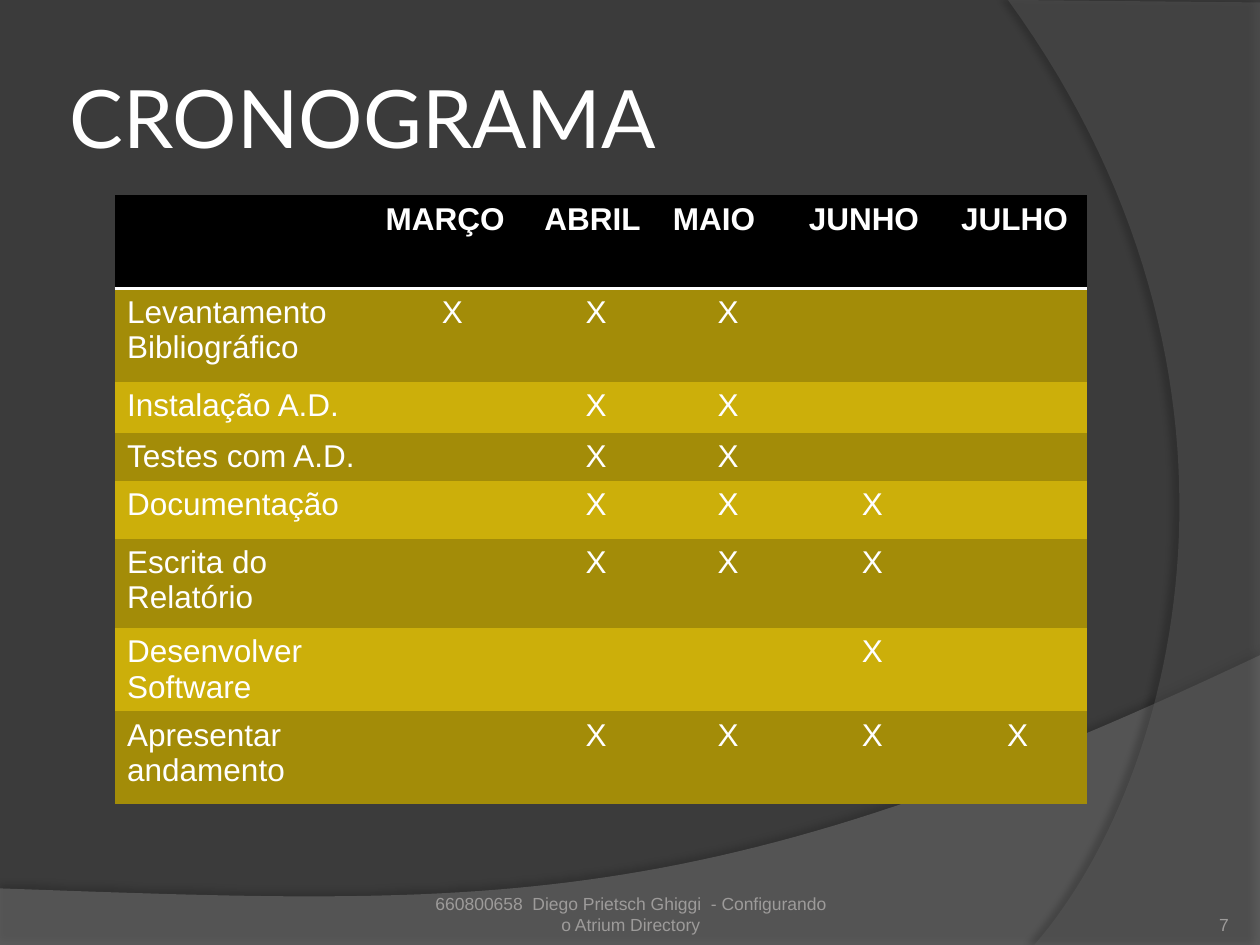
from dataclasses import dataclass

import pptx
import pptx.dml.color
import pptx.enum.text
import pptx.oxml
import pptx.oxml.ns
import pptx.util

Cm = pptx.util.Cm
Pt = pptx.util.Pt
RGBColor = pptx.dml.color.RGBColor
ALIGN = pptx.enum.text.PP_ALIGN
ANCHOR = pptx.enum.text.MSO_ANCHOR
NS = pptx.oxml.ns.nsdecls("a")

BACKGROUND = RGBColor(0x3B, 0x3B, 0x3B)
WHITE = RGBColor(0xFF, 0xFF, 0xFF)
BLACK = RGBColor(0x00, 0x00, 0x00)
FOOTER_GRAY = RGBColor(0x9D, 0x9B, 0x9A)
WAVE_GRAY = RGBColor(0x7F, 0x7F, 0x7F)
ARC_GRAY = RGBColor(0x5E, 0x5E, 0x5E)
DARK_GOLD = RGBColor(0xA3, 0x8C, 0x08)
LIGHT_GOLD = RGBColor(0xCC, 0xAF, 0x0A)

NO_STYLE = "{2D5ABB26-0587-4C30-8999-92F81FD0307C}"
WIDTH, HEIGHT = 25.4, 19.05
Point = tuple[float, float]


@dataclass
class Swoosh:
    """Straight corners, then a Bézier curve from the last corner; lengths in cm."""
    corners: list[Point]
    curve: tuple[Point, Point, Point]
    color: RGBColor
    opacity: int
    shadow_opacity: int
    shadow_distance: float
    shadow_angle: int


@dataclass
class Task:
    name: str
    months: str
    height: float


SWOOSHES = [
    Swoosh([(0, 17.91), (0, HEIGHT), (WIDTH, HEIGHT), (WIDTH, 13.21)],
           ((14.2, 18.52), (9.93, 18.26), (0, 17.91)), WAVE_GRAY, 45, 35, 3.5, 270),
    Swoosh([(WIDTH, 0.05), (WIDTH, HEIGHT), (20.85, HEIGHT)],
           ((23.75, 15.72), (25.86, 7.62), (20.32, 0)), ARC_GRAY, 40, 45, 4, 180),
]
MONTHS = ["MARÇO", "ABRIL", "MAIO", "JUNHO", "JULHO"]
COLUMN_WIDTHS = [5.21, 3.2, 2.59, 2.74, 3.07, 2.79]
HEADER_HEIGHT = 1.88
TASKS = [
    Task("Levantamento Bibliográfico", "MARÇO ABRIL MAIO", 1.88),
    Task("Instalação A.D.", "ABRIL MAIO", 1.02),
    Task("Testes com A.D.", "ABRIL MAIO", 0.97),
    Task("Documentação", "ABRIL MAIO JUNHO", 1.17),
    Task("Escrita do Relatório", "ABRIL MAIO JUNHO", 1.8),
    Task("Desenvolver Software", "JUNHO", 1.42),
    Task("Apresentar andamento", "ABRIL MAIO JUNHO JULHO", 1.88),
]


def write(tf, text: str, *, size: float = 18, color: RGBColor = WHITE,
          font: str = "Arial", bold: bool = False, align=ALIGN.LEFT) -> None:
    p = tf.paragraphs[0]
    p.alignment = align
    r = p.add_run()
    r.text = text
    r.font.size = Pt(size)
    r.font.name = font
    r.font.bold = bold
    r.font.color.rgb = color


def set_frame(tf, anchor, left: float, top: float, right: float, bottom: float) -> None:
    tf.word_wrap = True
    tf.auto_size = pptx.enum.text.MSO_AUTO_SIZE.NONE
    tf.vertical_anchor = anchor
    tf.margin_left, tf.margin_top = Cm(left), Cm(top)
    tf.margin_right, tf.margin_bottom = Cm(right), Cm(bottom)


def curve_points(start: Point, curve: tuple[Point, Point, Point],
                 steps: int = 60) -> list[Point]:
    points = []
    for i in range(1, steps + 1):
        t = i / steps
        weights = ((1 - t) ** 3, 3 * t * (1 - t) ** 2, 3 * t ** 2 * (1 - t), t ** 3)
        x, y = (sum(w * p[axis] for w, p in zip(weights, (start, *curve)))
                for axis in (0, 1))
        points.append((x, y))
    return points


def draw_swoosh(slide, swoosh: Swoosh) -> None:
    outline = swoosh.corners + curve_points(swoosh.corners[-1], swoosh.curve)
    start, *rest = [(Cm(x), Cm(y)) for x, y in outline]
    builder = slide.shapes.build_freeform(*start)
    builder.add_line_segments(rest, close=True)
    sp = builder.convert_to_shape()
    sp.fill.solid()
    sp.fill.fore_color.rgb = swoosh.color
    sp.line.fill.background()
    sp.shadow.inherit = False
    sp_pr = sp._element.spPr
    sp_pr.find(".//" + pptx.oxml.ns.qn("a:srgbClr")).append(
        pptx.oxml.parse_xml(f'<a:alpha {NS} val="{swoosh.opacity * 1000}"/>'))
    sp_pr.find(pptx.oxml.ns.qn("a:effectLst")).append(pptx.oxml.parse_xml(
        f'<a:outerShdw {NS} blurRad="{Pt(4)}" dist="{Pt(swoosh.shadow_distance)}" '
        f'dir="{swoosh.shadow_angle * 60000}" algn="ctr" rotWithShape="0">'
        f'<a:srgbClr val="000000"><a:alpha val="{swoosh.shadow_opacity * 1000}"/>'
        '</a:srgbClr></a:outerShdw>'))


def add_footer(slide, text: str, left: float, width: float, align, top_inset: float) -> None:
    box = slide.shapes.add_textbox(Cm(left), Cm(17.83), Cm(width), Cm(1.02))
    set_frame(box.text_frame, ANCHOR.BOTTOM, 0, top_inset, 0, 0)
    write(box.text_frame, text, size=10, color=FOOTER_GRAY, align=align)


def fill_cell(cell, color: RGBColor, text: str, **text_format) -> None:
    cell.fill.solid()
    cell.fill.fore_color.rgb = color
    write(cell.text_frame, text, **text_format)


def underline_cell(cell) -> None:
    cell._tc.get_or_add_tcPr().insert(0, pptx.oxml.parse_xml(
        f'<a:lnB {NS} w="{Pt(2)}"><a:solidFill><a:srgbClr val="{WHITE}"/>'
        '</a:solidFill></a:lnB>'))


def add_schedule(slide) -> None:
    heights = [HEADER_HEIGHT] + [task.height for task in TASKS]
    table = slide.shapes.add_table(
        len(heights), len(COLUMN_WIDTHS), Cm(2.31), Cm(3.94),
        Cm(sum(COLUMN_WIDTHS)), Cm(sum(heights))).table
    table._tbl.tblPr.find(pptx.oxml.ns.qn("a:tableStyleId")).text = NO_STYLE
    for column, width in zip(table.columns, COLUMN_WIDTHS):
        column.width = Cm(width)
    for row, height in zip(table.rows, heights):
        row.height = Cm(height)
    for col, month in enumerate(["", *MONTHS]):
        fill_cell(table.cell(0, col), BLACK, month, bold=True)
        underline_cell(table.cell(0, col))
    for row, task in enumerate(TASKS, 1):
        color = DARK_GOLD if row % 2 else LIGHT_GOLD
        fill_cell(table.cell(row, 0), color, task.name)
        for col, month in enumerate(MONTHS, 1):
            mark = "X" if month in task.months.split() else ""
            fill_cell(table.cell(row, col), color, mark, align=ALIGN.CENTER)


def main() -> None:
    prs = pptx.Presentation()
    prs.slide_width, prs.slide_height = Cm(WIDTH), Cm(HEIGHT)
    slide = prs.slides.add_slide(prs.slide_layouts[5])
    slide.background.fill.solid()
    slide.background.fill.fore_color.rgb = BACKGROUND

    for swoosh in SWOOSHES:
        draw_swoosh(slide, swoosh)

    title = slide.shapes.title
    title.left, title.top = Cm(1.27), Cm(0.76)
    title.width, title.height = Cm(20.75), Cm(3.18)
    set_frame(title.text_frame, ANCHOR.MIDDLE, 0.13, 0.13, 0.13, 0.13)
    write(title.text_frame, "CRONOGRAMA", size=46, font="Lato")

    add_footer(slide, "7", 22.66, 2.11, ALIGN.RIGHT, 0)
    add_footer(slide, "660800658  Diego Prietsch Ghiggi  - Configurando o Atrium Directory",
               8.69, 8.05, ALIGN.CENTER, 0.13)
    add_schedule(slide)
    prs.save("out.pptx")


if __name__ == "__main__":
    main()
